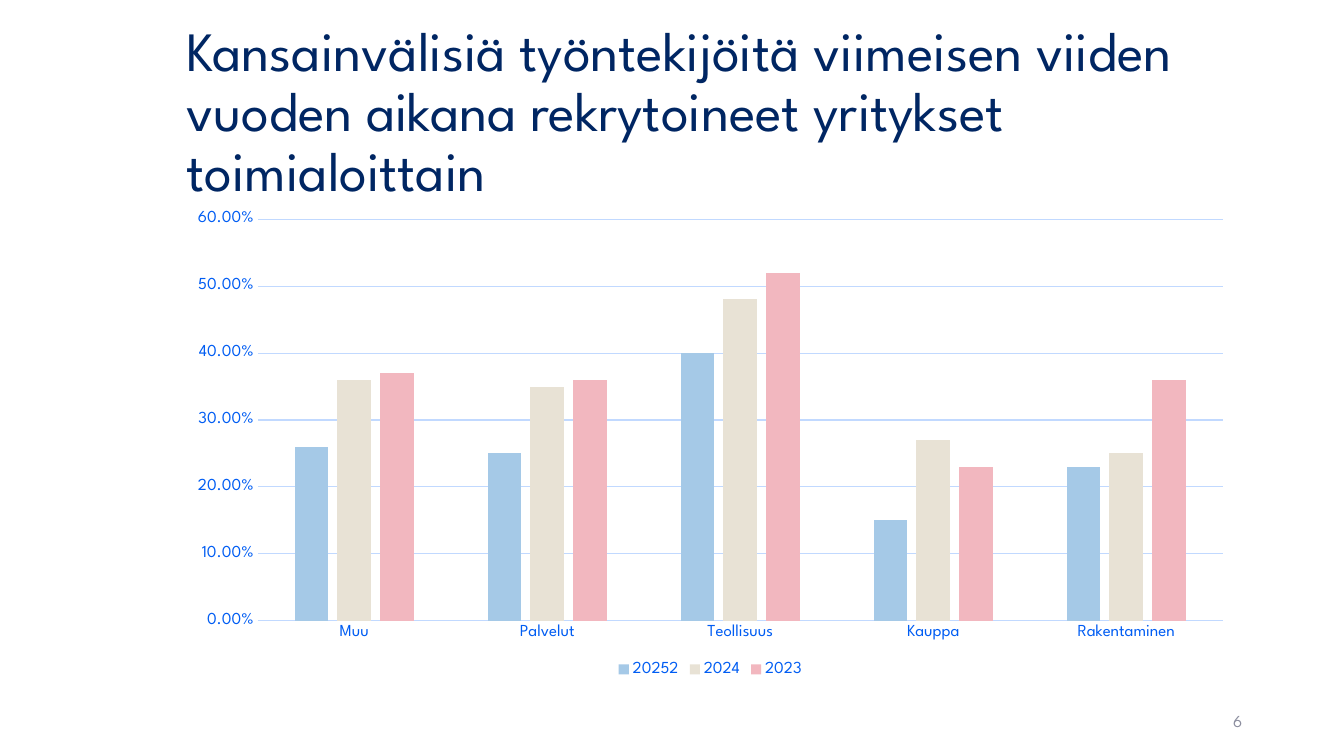
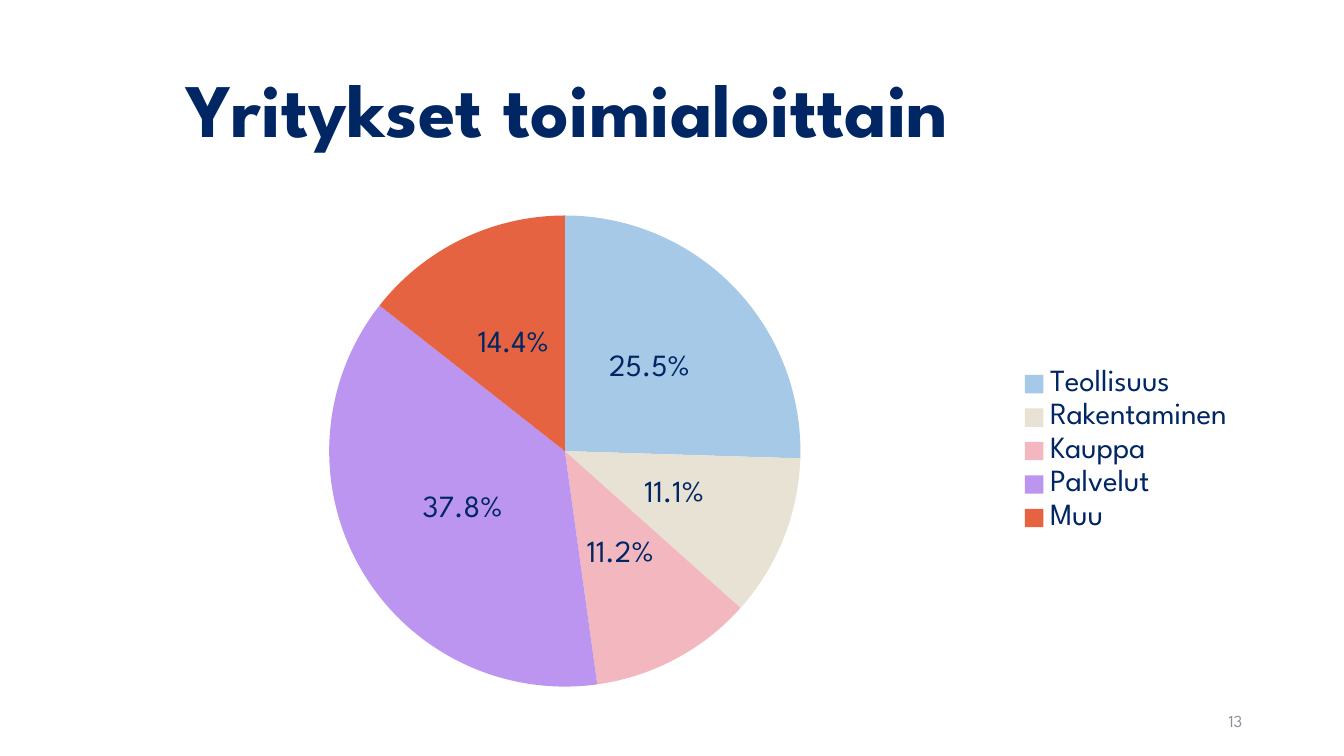
import pptx
import pptx.util
import pptx.chart.data
import pptx.dml.color
import pptx.enum.chart
import pptx.enum.text

Inches = pptx.util.Inches
Pt = pptx.util.Pt
XL = pptx.enum.chart

FONT = "League Spartan"
NAVY, BLUE, PALE, GREY = "002663", "005DF3", "C1D9FF", "8C8E9F"
PALETTE = ["A5C9E7", "E8E2D5", "F2B7BF", "BB95EF", "E66342"]

TITLE_BOX = (1.75, 0.4, 10.59, 1.45)
NUMBER_BOX = (9.42, 6.95, 3, 0.4)


def rgb(color):
    """Turn a hex string into a colour."""
    return pptx.dml.color.RGBColor.from_string(color)


def paint(fill, color):
    """Give a fill one solid colour."""
    fill.solid()
    fill.fore_color.rgb = rgb(color)


def style_font(font, size, color, bold=False):
    """Set typeface, size, colour and weight."""
    font.name = FONT
    font.size = Pt(size)
    font.bold = bold
    font.color.rgb = rgb(color)


def style_line(line, color, width=0.75):
    """Set colour and width of a line."""
    line.color.rgb = rgb(color)
    line.width = Pt(width)


def add_text(slide, box, text, size, color, bold=False, align="LEFT", spacing=1.0):
    """Place one vertically centred paragraph in a box."""
    sp = slide.shapes.add_textbox(*map(Inches, box))
    tf = sp.text_frame
    tf.word_wrap = True
    tf.vertical_anchor = pptx.enum.text.MSO_ANCHOR.MIDDLE
    p = tf.paragraphs[0]
    p.alignment = getattr(pptx.enum.text.PP_ALIGN, align)
    p.line_spacing = spacing
    r = p.add_run()
    r.text = text
    style_font(r.font, size, color, bold)


def add_base(prs, title, title_size, number, bold=False):
    """Add a white slide with its title and page number."""
    slide = prs.slides.add_slide(prs.slide_layouts[6])
    paint(slide.background.fill, "FFFFFF")
    add_text(slide, TITLE_BOX, title, title_size, NAVY, bold, spacing=0.9)
    add_text(slide, NUMBER_BOX, number, 12, GREY, align="RIGHT")
    return slide


def add_chart(slide, box, kind, categories, series, number_format, size, legend):
    """Add a chart with its legend; legend is (position, size, colour)."""
    data = pptx.chart.data.CategoryChartData(number_format=number_format)
    data.categories = categories
    for name, values in series:
        data.add_series(name, values)
    chart = slide.shapes.add_chart(kind, *map(Inches, box), data).chart
    chart.has_title = False
    style_font(chart.font, size, NAVY)
    position, legend_size, legend_color = legend
    chart.has_legend = True
    chart.legend.position = position
    chart.legend.include_in_layout = False
    style_font(chart.legend.font, legend_size, legend_color)
    return chart


def style_axis(axis):
    """Remove tick marks and set the label font of an axis."""
    axis.major_tick_mark = axis.minor_tick_mark = XL.XL_TICK_MARK.NONE
    style_font(axis.tick_labels.font, 12, BLUE)


def add_columns(slide, box, categories, series):
    """Add the clustered columns of recruiting companies."""
    chart = add_chart(slide, box, XL.XL_CHART_TYPE.COLUMN_CLUSTERED, categories,
                      series, "0.00%", 10, (XL.XL_LEGEND_POSITION.BOTTOM, 12, BLUE))
    plot = chart.plots[0]
    plot.gap_width, plot.overlap, plot.vary_by_categories = 219, -27, False
    for column, color in zip(plot.series, PALETTE):
        paint(column.format.fill, color)
        column.invert_if_negative = False
    style_axis(chart.category_axis)
    style_line(chart.category_axis.format.line, PALE)
    axis = chart.value_axis
    style_axis(axis)
    axis.minimum_scale, axis.maximum_scale, axis.major_unit = 0, 0.6, 0.1
    axis.tick_labels.number_format = "0.00%"
    axis.tick_labels.number_format_is_linked = False
    axis.format.line.fill.background()
    style_line(axis.major_gridlines.format.line, PALE)


def add_pie(slide, box, categories, values):
    """Add the pie of companies by industry."""
    chart = add_chart(slide, box, XL.XL_CHART_TYPE.PIE, categories,
                      [("Series 1", values)], "0.0%", 22,
                      (XL.XL_LEGEND_POSITION.RIGHT, 22, NAVY))
    plot = chart.plots[0]
    plot.vary_by_categories = True
    for i, color in enumerate(PALETTE):
        paint(plot.series[0].points[i].format.fill, color)
    plot.has_data_labels = True
    labels = plot.data_labels
    labels.show_value = True
    labels.show_percentage = False
    labels.number_format = "0.0%"
    labels.number_format_is_linked = False
    labels.position = XL.XL_LABEL_POSITION.CENTER
    style_font(labels.font, 22, NAVY)


def main():
    """Build and save the two slides."""
    prs = pptx.Presentation()
    prs.slide_width, prs.slide_height = Inches(13.33), Inches(7.5)

    slide = add_base(prs, "Kansainvälisiä työntekijöitä viimeisen viiden vuoden "
                     "aikana rekrytoineet yritykset toimialoittain", 39.6, "6")
    add_columns(slide, (1.75, 2, 10.59, 4.76),
                ["Muu", "Palvelut", "Teollisuus", "Kauppa", "Rakentaminen"],
                [("20252", [0.26, 0.25, 0.40, 0.15, 0.23]),
                 ("2024", [0.36, 0.35, 0.48, 0.27, 0.25]),
                 ("2023", [0.37, 0.36, 0.52, 0.23, 0.36])])

    slide = add_base(prs, "Yritykset toimialoittain", 54, "13", bold=True)
    add_pie(slide, (1.14, 2, 11.21, 4.95),
            ["Teollisuus", "Rakentaminen", "Kauppa", "Palvelut", "Muu"],
            [0.255, 0.111, 0.112, 0.378, 0.144])

    prs.save("out.pptx")


if __name__ == "__main__":
    main()
